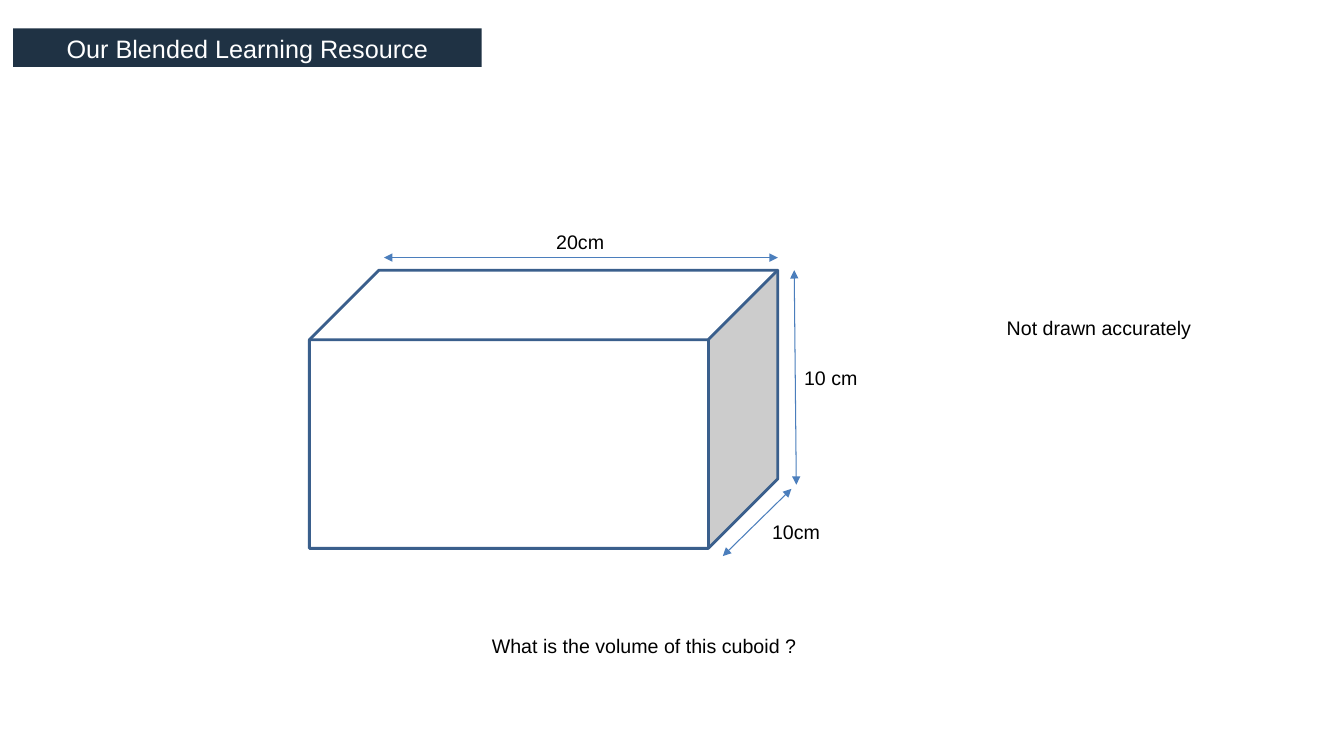
from dataclasses import dataclass

from lxml import etree
from pptx import Presentation
from pptx.dml.color import RGBColor
from pptx.enum.shapes import MSO_CONNECTOR, MSO_SHAPE
from pptx.enum.text import MSO_ANCHOR, MSO_AUTO_SIZE, PP_ALIGN
from pptx.oxml.ns import qn
from pptx.util import Pt

RECTANGLE = MSO_SHAPE.RECTANGLE
CUBE = MSO_SHAPE.CUBE
STRAIGHT = MSO_CONNECTOR.STRAIGHT
MIDDLE = MSO_ANCHOR.MIDDLE
FIT_SHAPE = MSO_AUTO_SIZE.SHAPE_TO_FIT_TEXT
LEFT = PP_ALIGN.LEFT
CENTER = PP_ALIGN.CENTER


@dataclass(frozen=True)
class Theme:
    font: str = "Arial"
    navy: RGBColor = RGBColor(0x1F, 0x32, 0x44)
    outline: RGBColor = RGBColor(0x3A, 0x5F, 0x8C)
    arrow: RGBColor = RGBColor(0x4B, 0x7E, 0xBC)
    white: RGBColor = RGBColor(0xFF, 0xFF, 0xFF)
    black: RGBColor = RGBColor(0, 0, 0)
    banner_size: float = 18
    body_size: float = 14
    outline_width: float = 2
    arrow_width: float = 0.75


THEME = Theme()
LABEL_HEIGHT = 24.2


def write_text(frame, text, size=THEME.body_size, color=THEME.black, align=LEFT):
    para = frame.paragraphs[0]
    para.alignment = align
    span = para.add_run()
    span.text = text
    span.font.name = THEME.font
    span.font.size = Pt(size)
    span.font.color.rgb = color


def add_label(page, text, left, top, width):
    box = page.shapes.add_textbox(Pt(left), Pt(top), Pt(width), Pt(LABEL_HEIGHT))
    box.text_frame.word_wrap = False
    box.text_frame.auto_size = FIT_SHAPE
    write_text(box.text_frame, text)


def add_solid(page, kind, box, fill):
    solid = page.shapes.add_shape(kind, *map(Pt, box))
    solid.shadow.inherit = False
    solid.fill.solid()
    solid.fill.fore_color.rgb = fill
    return solid


def add_dimension(page, start, end):
    arrow = page.shapes.add_connector(STRAIGHT, *map(Pt, start + end))
    arrow.line.color.rgb = THEME.arrow
    arrow.line.width = Pt(THEME.arrow_width)
    line = arrow.line._get_or_add_ln()
    for end_tag in ("a:headEnd", "a:tailEnd"):
        etree.SubElement(line, qn(end_tag), type="triangle")
    etree.SubElement(arrow._element.spPr, qn("a:effectLst"))


def add_banner(page, box):
    banner = add_solid(page, RECTANGLE, box, THEME.navy)
    banner.line.fill.background()
    frame = banner.text_frame
    frame.word_wrap = True
    frame.vertical_anchor = MIDDLE
    frame.margin_top = Pt(5)
    write_text(frame, "Our Blended Learning Resource",
               size=THEME.banner_size, color=THEME.white, align=CENTER)


def add_cuboid(page, box):
    left, top, width, height = box
    depth = height / 4
    right, bottom = left + width, top + height

    cuboid = add_solid(page, CUBE, box, THEME.white)
    cuboid.adjustments[0] = depth / height
    cuboid.line.color.rgb = THEME.outline
    cuboid.line.width = Pt(THEME.outline_width)

    add_dimension(page, (left + depth + 3.6, top - 9), (right, top - 9))
    add_dimension(page, (right + 11.7, top), (right + 13.2, bottom - depth + 4.2))
    add_dimension(page, (right - depth + 10.4, bottom + 5.5),
                  (right + 9.7, bottom - depth + 7.2))

    add_label(page, "20cm", left + 169.2, top - 32.2, 49)
    add_label(page, "10 cm", right + 11.7, top + 64.8, 52.6)
    add_label(page, "10cm", right - 11.2, bottom - 23.8, 49)


def main():
    deck = Presentation()
    deck.slide_width, deck.slide_height = Pt(960), Pt(540)
    page = deck.slides.add_slide(deck.slide_layouts[6])
    add_banner(page, (9.4, 20.2, 334.6, 27.6))
    add_cuboid(page, (221, 193, 334.6, 198.7))
    add_label(page, "Not drawn accurately", 712, 221.8, 146.9)
    add_label(page, "What is the volume of this cuboid ?", 344.2, 449.3, 233.3)
    deck.save("out.pptx")


if __name__ == "__main__":
    main()
